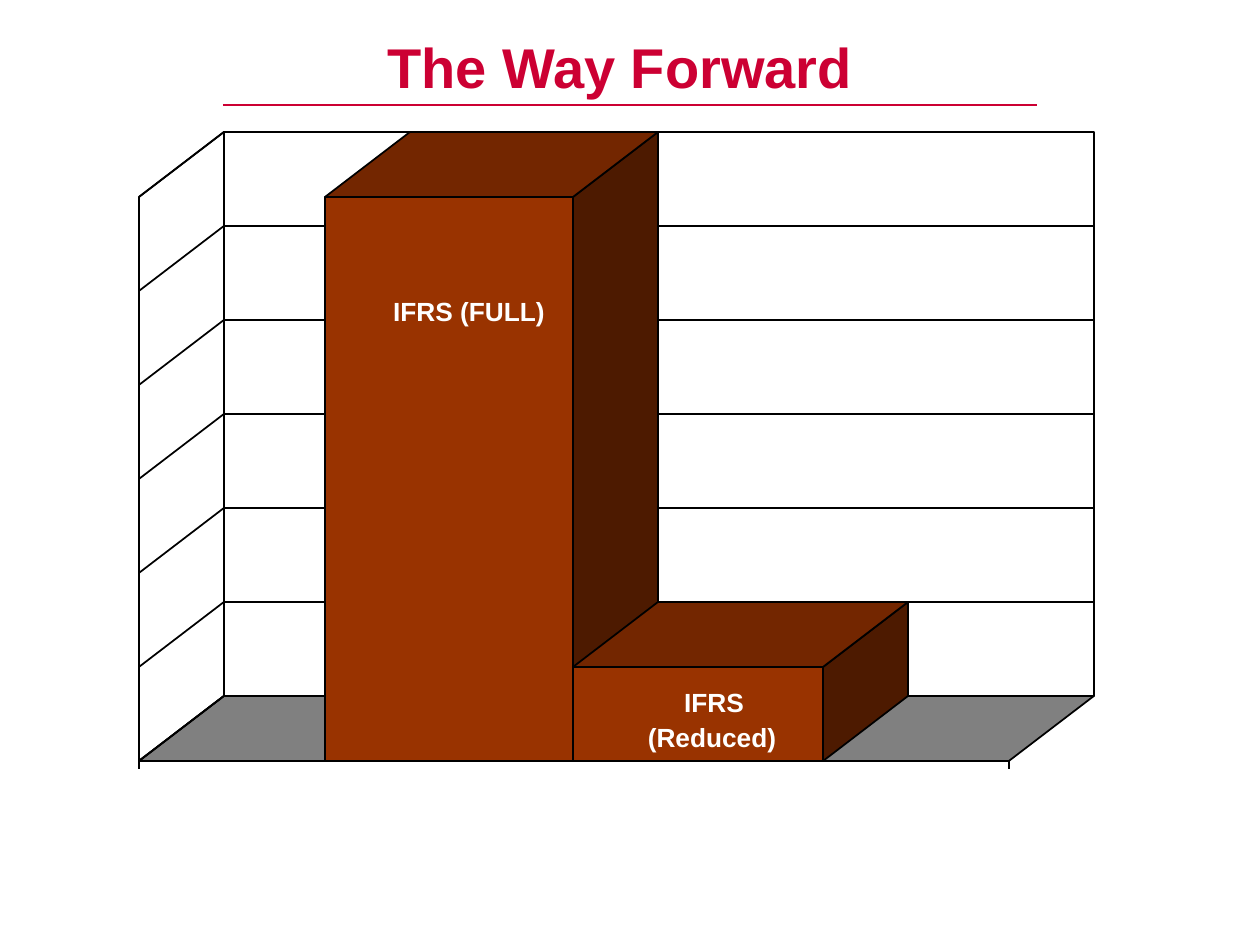
from pptx import Presentation
from pptx import util as u
from pptx.dml.color import RGBColor
from pptx.enum import shapes, text
from pptx.oxml.ns import qn
from lxml import etree

SCALE = 914400 / 126  # EMU per px
COLORS = {"title": "CC0033", "line": "000000", "floor": "808080", "front": "993300",
          "top": "732600", "side": "4D1A00", "label": "FFFFFF"}

TITLE = ("The Way Forward", (213, 27, 814, 79))
TITLE_RULE = ((223, 105), (1037, 105))
LEFT, RIGHT, BOTTOM = 139, 1009, 761  # front edge of the floor
DEPTH_X, DEPTH_Y = 85, 65             # offset from front to back
STEP, STEPS = 94, 6                   # height between grid lines
TICK = 8
BARS = [  # left, width, height in steps, labels as (text, box)
    (325, 248, 6, [("IFRS (FULL)", (384, 295, 170, 32))]),
    (573, 250, 1, [("IFRS", (677, 686, 74, 32)), ("(Reduced)", (637, 721, 150, 32))]),
]

deck = Presentation()
deck.slide_width, deck.slide_height = u.Inches(10), u.Inches(7.5)
page = deck.slides.add_slide(deck.slide_layouts[6])


def px(*values):
    return [u.Emu(round(value * SCALE)) for value in values]


def back(x, y):
    """Point on the back plane behind a front point."""
    return x + DEPTH_X, y - DEPTH_Y


def paint(shape, fill=None, line="line"):
    shape.shadow.inherit = False
    if fill:
        shape.fill.solid()
        shape.fill.fore_color.rgb = RGBColor.from_string(COLORS[fill])
    else:
        shape.fill.background()
    if line:
        shape.line.color.rgb = RGBColor.from_string(COLORS[line])
        shape.line.width = u.Pt(1)
    else:
        shape.line.fill.background()


def add_outline(points, close=True, **style):
    builder = page.shapes.build_freeform(*points[0], scale=SCALE)
    builder.add_line_segments(points[1:], close=close)
    paint(builder.convert_to_shape(), **style)


def add_rect(left, top, width, height, **style):
    paint(page.shapes.add_shape(shapes.MSO_SHAPE.RECTANGLE, *px(left, top, width, height)), **style)


def add_line(start, end, color="line", width=1):
    line = page.shapes.add_connector(shapes.MSO_CONNECTOR.STRAIGHT, *px(*start, *end))
    line.line.color.rgb = RGBColor.from_string(COLORS[color])
    line.line.width = u.Pt(width)
    etree.SubElement(line._element.spPr, qn("a:effectLst"))


def add_text(words, place, size, color, wrap, margin=None):
    box = page.shapes.add_textbox(*px(*place))
    frame = box.text_frame
    frame.word_wrap = wrap
    frame.vertical_anchor = text.MSO_ANCHOR.MIDDLE
    if margin is not None:
        for side in ("left", "right", "top", "bottom"):
            setattr(frame, f"margin_{side}", margin)
    para = frame.paragraphs[0]
    para.alignment = text.PP_ALIGN.CENTER
    span = para.add_run()
    span.text = words
    for name, value in {"name": "Arial", "size": u.Pt(size), "bold": True}.items():
        setattr(span.font, name, value)
    span.font.color.rgb = RGBColor.from_string(COLORS[color])


def add_room():
    """Floor, grid lines, side wall and back wall."""
    top = BOTTOM - STEP * STEPS
    floor = [(LEFT, BOTTOM), back(LEFT, BOTTOM), back(RIGHT, BOTTOM), (RIGHT, BOTTOM)]
    add_outline(floor, fill="floor")
    for step in range(STEPS + 1):
        y = BOTTOM - step * STEP
        add_outline([(LEFT, y), back(LEFT, y), back(RIGHT, y)], close=False)
    add_outline([(LEFT, BOTTOM), (LEFT, top), back(LEFT, top), back(LEFT, BOTTOM)])
    add_rect(*back(LEFT, top), RIGHT - LEFT, BOTTOM - top)


def add_bar(left, width, steps, labels):
    right, top = left + width, BOTTOM - steps * STEP
    add_outline([(right, BOTTOM), (right, top), back(right, top), back(right, BOTTOM)], fill="side")
    add_rect(left, top, width, BOTTOM - top, fill="front")
    add_outline([(right, top), back(right, top), back(left, top), (left, top)], fill="top")
    for words, place in labels:
        add_text(words, place, 15, "label", wrap=False, margin=0)


add_room()
for bar in BARS:
    add_bar(*bar)
add_line((LEFT, BOTTOM), (RIGHT, BOTTOM))
for x in (LEFT, RIGHT):
    add_line((x, BOTTOM), (x, BOTTOM + TICK))
add_line(*TITLE_RULE, color="title", width=1.5)
add_text(*TITLE, 32, "title", wrap=True)

deck.save("out.pptx")
